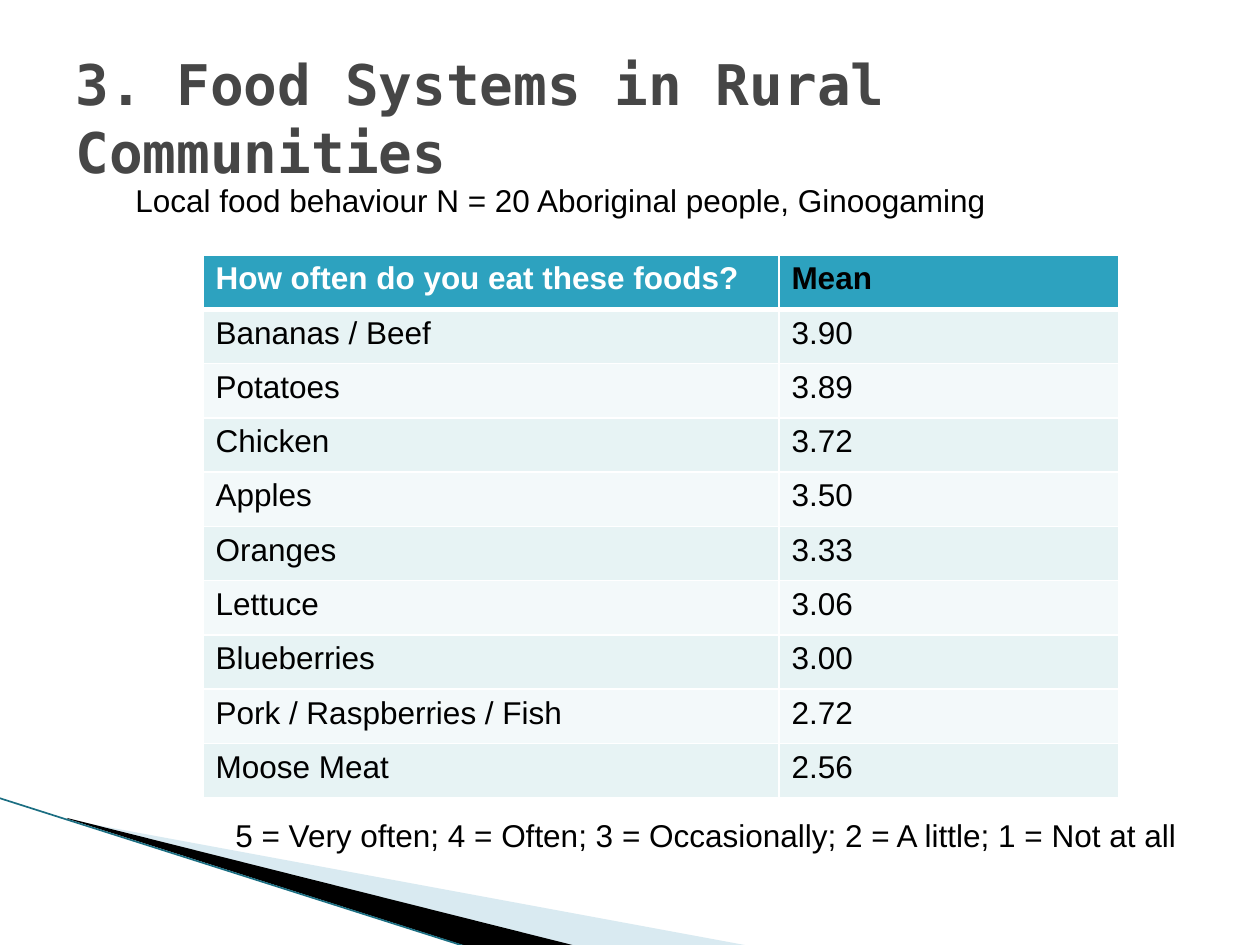
from lxml.etree import SubElement
from pptx import Presentation
from pptx.dml.color import RGBColor
from pptx.enum.shapes import MSO_CONNECTOR as Connector
from pptx.enum.text import MSO_ANCHOR as Anchor
from pptx.oxml.ns import qn
from pptx.util import Pt

EMU_PER_PX = 914400 / 126

WHITE = RGBColor(0xFF, 0xFF, 0xFF)
BLACK = RGBColor(0x00, 0x00, 0x00)
TITLE_GREY = RGBColor(0x46, 0x46, 0x46)
HEADER_TEAL = RGBColor(0x2D, 0xA2, 0xBF)
BAND_DARK = RGBColor(0xE7, 0xF3, 0xF4)
BAND_LIGHT = RGBColor(0xF3, 0xF9, 0xFA)
PALE_BLUE = RGBColor(0xA0, 0xCB, 0xDC)
EDGE_TEAL = RGBColor(0x1B, 0x6E, 0x82)

BODY_FONT = "Arial"
TITLE_FONT = "DejaVu Sans Mono"

COLUMN_WIDTHS = (576, 340)
TABLE_HEIGHT = 543
FOOD_ROWS = [
    ("How often do you eat these foods?", "Mean"),
    ("Bananas / Beef", "3.90"),
    ("Potatoes", "3.89"),
    ("Chicken", "3.72"),
    ("Apples", "3.50"),
    ("Oranges", "3.33"),
    ("Lettuce", "3.06"),
    ("Blueberries", "3.00"),
    ("Pork / Raspberries / Fish", "2.72"),
    ("Moose Meat", "2.56"),
]


def px(length):
    return round(length * EMU_PER_PX)


def add_run(paragraph, text, size=18, color=BLACK, bold=False, font=BODY_FONT):
    run = paragraph.add_run()
    run.text = text
    run.font.name = font
    run.font.size = Pt(size)
    run.font.bold = bold
    run.font.color.rgb = color


def add_text(slide, text, left, top, width, height, anchor=Anchor.TOP, **style):
    box = slide.shapes.add_textbox(px(left), px(top), px(width), px(height))
    frame = box.text_frame
    frame.word_wrap = True
    frame.vertical_anchor = anchor
    add_run(frame.paragraphs[0], text, **style)


def add_wedge(slide, points, color, opacity=100):
    builder = slide.shapes.build_freeform(*points[0], scale=EMU_PER_PX)
    builder.add_line_segments(points[1:], close=True)
    shape = builder.convert_to_shape()
    shape.shadow.inherit = False
    shape.line.fill.background()
    shape.fill.solid()
    shape.fill.fore_color.rgb = color
    if opacity < 100:
        color_element = shape.fill._xPr.find(".//" + qn("a:srgbClr"))
        SubElement(color_element, qn("a:alpha"), val=str(opacity * 1000))


def add_line(slide, start, end, color, width):
    ends = [px(value) for value in (*start, *end)]
    line = slide.shapes.add_connector(Connector.STRAIGHT, *ends)
    line.line.color.rgb = color
    line.line.width = Pt(width)
    SubElement(line._element.spPr, qn("a:effectLst"))


def set_border(cell, side, width):
    properties = cell._tc.get_or_add_tcPr()
    border = SubElement(properties, qn(f"a:ln{side}"), w=str(Pt(width)))
    fill = SubElement(border, qn("a:solidFill"))
    SubElement(fill, qn("a:srgbClr"), val=str(WHITE))


def format_cell(cell, row, fill):
    """Draw white borders, with a thick rule under the header, then fill."""
    widths = {"L": 1, "R": 1, "T": 3 if row == 1 else 1, "B": 3 if row == 0 else 1}
    for side, width in widths.items():
        set_border(cell, side, width)
    cell.fill.solid()
    cell.fill.fore_color.rgb = fill


def add_food_table(slide, left, top):
    frame = slide.shapes.add_table(
        len(FOOD_ROWS), len(COLUMN_WIDTHS), px(left), px(top),
        px(sum(COLUMN_WIDTHS)), px(TABLE_HEIGHT))
    table = frame.table
    for column, width in zip(table.columns, COLUMN_WIDTHS):
        column.width = px(width)
    for row, texts in enumerate(FOOD_ROWS):
        is_header = row == 0
        fill = HEADER_TEAL if is_header else BAND_DARK if row % 2 else BAND_LIGHT
        for column, text in enumerate(texts):
            cell = table.cell(row, column)
            format_cell(cell, row, fill)
            color = WHITE if is_header and column == 0 else BLACK
            add_run(cell.text_frame.paragraphs[0], text, color=color, bold=is_header)


def main():
    presentation = Presentation()
    presentation.slide_width = px(1260)
    presentation.slide_height = px(945)
    slide = presentation.slides.add_slide(presentation.slide_layouts[6])

    add_wedge(slide, [(69, 820), (750, 946), (575, 946), (69, 819)], PALE_BLUE, opacity=40)
    add_wedge(slide, [(67, 818), (576, 946), (469, 947), (68, 819)], BLACK)
    add_line(slide, (-1, 798), (467, 947), EDGE_TEAL, 0.95)

    add_food_table(slide, 203, 255)
    add_text(slide, "5 = Very often; 4 = Often; 3 = Occasionally; 2 = A little; 1 = Not at all",
             223, 810, 975, 50)
    add_text(slide, "3. Food Systems in Rural Communities", 63, 38, 1134, 158,
             anchor=Anchor.MIDDLE, size=32, color=TITLE_GREY, bold=True, font=TITLE_FONT)
    add_text(slide, "Local food behaviour N = 20 Aboriginal people, Ginoogaming",
             123, 175, 883, 50)

    presentation.save("out.pptx")


if __name__ == "__main__":
    main()
